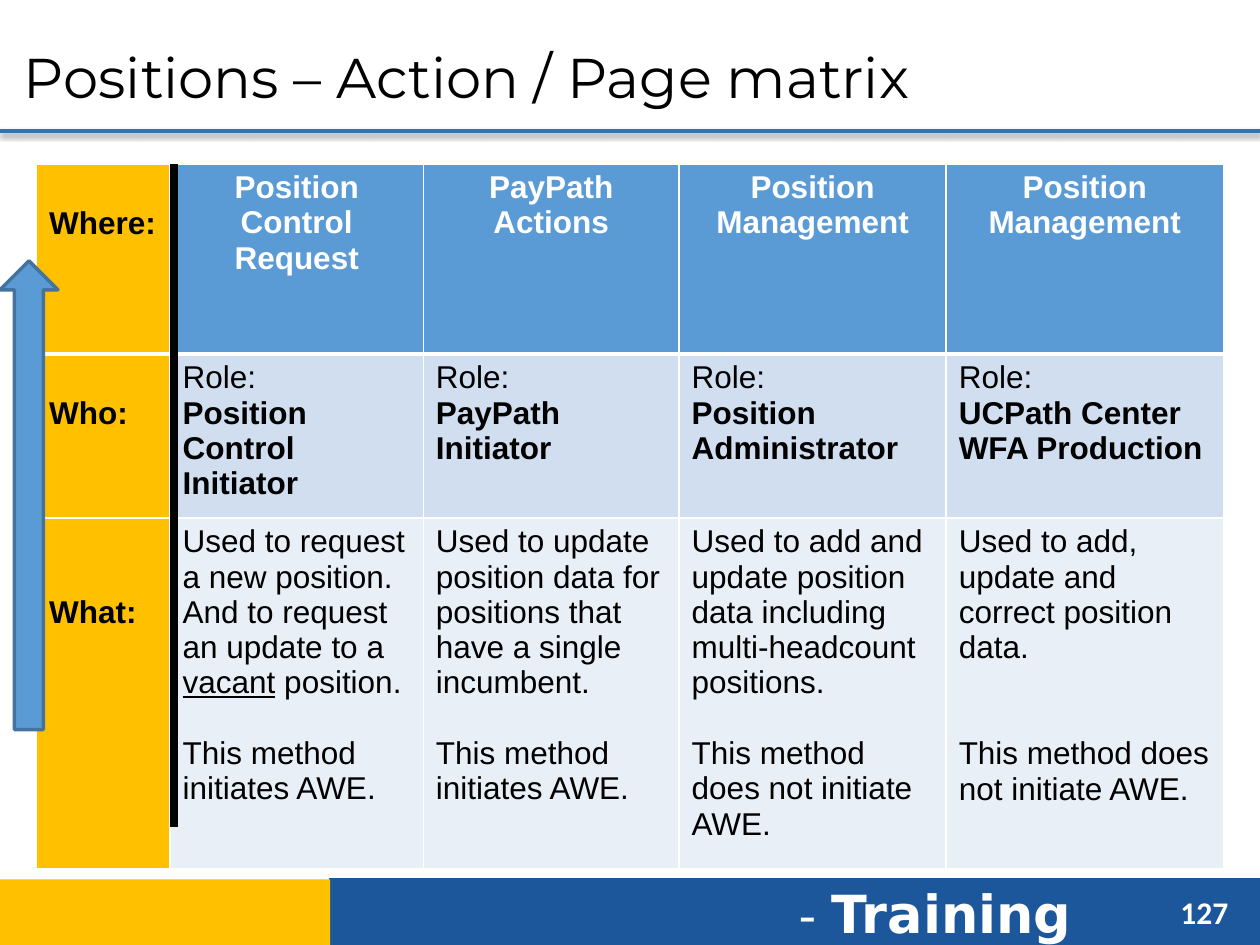
from pptx import Presentation
from pptx.dml.color import RGBColor
from pptx.enum.shapes import MSO_CONNECTOR as Conn, MSO_SHAPE as Shape
from pptx.enum.text import MSO_ANCHOR as Anchor, MSO_AUTO_SIZE as Auto, PP_ALIGN as Align
from pptx.oxml import parse_xml
from pptx.oxml.ns import nsdecls
from pptx.util import Inches, Pt

WHITE = RGBColor(0xFF, 0xFF, 0xFF)
BLACK = RGBColor(0, 0, 0)
GOLD = RGBColor(0xFF, 0xC0, 0x00)
NAVY = RGBColor(0x1D, 0x57, 0x9B)
RULE = RGBColor(0x2E, 0x75, 0xB5)
BLUE = RGBColor(0x5B, 0x9B, 0xD5)
EDGE = RGBColor(0x43, 0x73, 0x9E)
PALE = RGBColor(0xD0, 0xDE, 0xEF)
MIST = RGBColor(0xE9, 0xEF, 0xF7)

LINE = 20.3  # height of one line of table text, in points
SHADE = ('<a:outerShdw blurRad="39370" dist="20320" dir="5400000">'
         '<a:srgbClr val="000000"><a:alpha val="38000"/></a:srgbClr></a:outerShdw>')


def grid(*units):
    """Lengths on a grid of 100 columns by 75 rows."""
    return [Inches(unit / 10) for unit in units]


def write(frame, paras, font="Arial", size=18, color=BLACK, bold=False, align=Align.LEFT):
    """Each paragraph is a string or a dict with runs, bold and gap (empty lines above)."""
    for i, item in enumerate(paras):
        item = {"runs": [item]} if isinstance(item, str) else item
        para = frame.paragraphs[0] if i == 0 else frame.add_paragraph()
        para.alignment = align
        if item.get("gap"):
            para.space_before = Pt(item["gap"] * LINE)
        for part in item["runs"]:
            words, extra = (part, {}) if isinstance(part, str) else part
            run = para.add_run()
            run.text = words
            run.font.name = font
            run.font.size = Pt(extra.get("size", size))
            run.font.bold = extra.get("bold", item.get("bold", bold))
            run.font.underline = extra.get("line")
            run.font.color.rgb = color


class Page:
    def __init__(self, deck):
        self.slide = deck.slides.add_slide(deck.slide_layouts[5])
        self.shapes = self.slide.shapes

    def title(self, words, at):
        box = self.shapes.title
        box.left, box.top, box.width, box.height = grid(*at)
        frame = box.text_frame
        frame.auto_size = Auto.NONE
        frame.vertical_anchor = Anchor.MIDDLE
        write(frame, [words], font="Montserrat", size=32)

    def block(self, kind, at, fill, edge=None):
        box = self.shapes.add_shape(kind, *grid(*at))
        box.shadow.inherit = False
        box.fill.solid()
        box.fill.fore_color.rgb = fill
        if edge:
            box.line.color.rgb = edge
            box.line.width = Pt(2)
        else:
            box.line.fill.background()

    def label(self, runs, at, **style):
        frame = self.shapes.add_textbox(*grid(*at)).text_frame
        frame.word_wrap = True
        write(frame, [{"runs": runs}], color=WHITE, **style)

    def rule(self, ends, color, width, shade=""):
        line = self.shapes.add_connector(Conn.STRAIGHT, *grid(*ends))
        line.line.color.rgb = color
        line.line.width = Pt(width)
        props = line._element.spPr
        props.append(parse_xml(f'<a:effectLst {nsdecls("a")}>{shade}</a:effectLst>'))

    def table(self, at, cols, rows):
        table = self.shapes.add_table(len(rows), len(cols), *grid(*at)).table
        for col, width in zip(table.columns, grid(*cols)):
            col.width = width
        for row, height in zip(table.rows, grid(*rows)):
            row.height = height
        return table

    def cell(self, cell, paras, fill, skip=0, under=1, **style):
        cell.margin_top = Inches(0.05) + Pt(skip * LINE)
        write(cell.text_frame, paras, **style)
        cell.fill.solid()
        cell.fill.fore_color.rgb = fill
        props = cell._tc.get_or_add_tcPr()
        for i, (side, width) in enumerate([("L", 1), ("R", 1), ("T", 1), ("B", under)]):
            props.insert(i, parse_xml(
                f'<a:ln{side} {nsdecls("a")} w="{Pt(width)}"><a:solidFill>'
                f'<a:srgbClr val="{WHITE}"/></a:solidFill></a:ln{side}>'))


# Row labels, with the number of lines they sit below the top of the cell
SIDE = [("Where:", 1), ("Who:", 1), ("What:", 2)]
WHERE = ["Position Control Request", "PayPath Actions",
         "Position Management", "Position Management"]
WHO = ["Position Control Initiator", "PayPath Initiator",
       "Position Administrator", "UCPath Center WFA Production"]
DOES = "This method initiates AWE."
NOT = "This method does not initiate AWE."
WHAT = [
    (["Used to request a new position.",
      {"runs": ["And to request an update to a ", ("vacant", {"line": True}), " position."]}],
     DOES, 1),
    (["Used to update position data for positions that have a single incumbent."], DOES, 1),
    (["Used to add and update position data including multi-headcount positions."], NOT, 1),
    (["Used to add, update and correct position data."], NOT, 2),
]


def main():
    deck = Presentation()
    deck.slide_width, deck.slide_height = grid(100, 75)
    page = Page(deck)

    # Footer band, header rule and title
    page.block(Shape.RECTANGLE, (26.1, 69.7, 73.9, 5.5), NAVY)
    page.label(["- ", ("Training", {"size": 30, "bold": True})],
               (62.4, 69.4, 28, 6.1), font="DejaVu Sans", size=28)
    page.rule((0, 10.4, 100, 10.4), RULE, 2.25, SHADE)
    page.label(["127"], (92.7, 70.4, 6, 4), font="Calibri", bold=True)
    page.block(Shape.RECTANGLE, (-0.1, 69.8, 26.3, 5.5), GOLD)
    page.title("Positions – Action / Page matrix", (0.9, 1.4, 100, 9.3))

    # Matrix
    table = page.table((2.9, 13, 94.1, 52.6), (10.6, 20.1, 20.3, 21.2, 22), (15.1, 10.5, 27))
    for row, (name, skip) in enumerate(SIDE):
        page.cell(table.cell(row, 0), [name], GOLD, skip, under=1 if row else 3, bold=True)
    for col, (where, who, (use, note, gap)) in enumerate(zip(WHERE, WHO, WHAT), 1):
        page.cell(table.cell(0, col), [where], BLUE, under=3,
                  color=WHITE, bold=True, align=Align.CENTER)
        page.cell(table.cell(1, col), ["Role:", {"runs": [who], "bold": True}], PALE)
        page.cell(table.cell(2, col), use + [{"runs": [note], "gap": gap}], MIST)

    # Divider and upward arrow
    page.rule((13.8, 13, 13.8, 65.6), BLACK, 4.5)
    page.block(Shape.UP_ARROW, (0, 20.7, 4.6, 37.2), BLUE, EDGE)

    deck.save("out.pptx")


if __name__ == "__main__":
    main()
